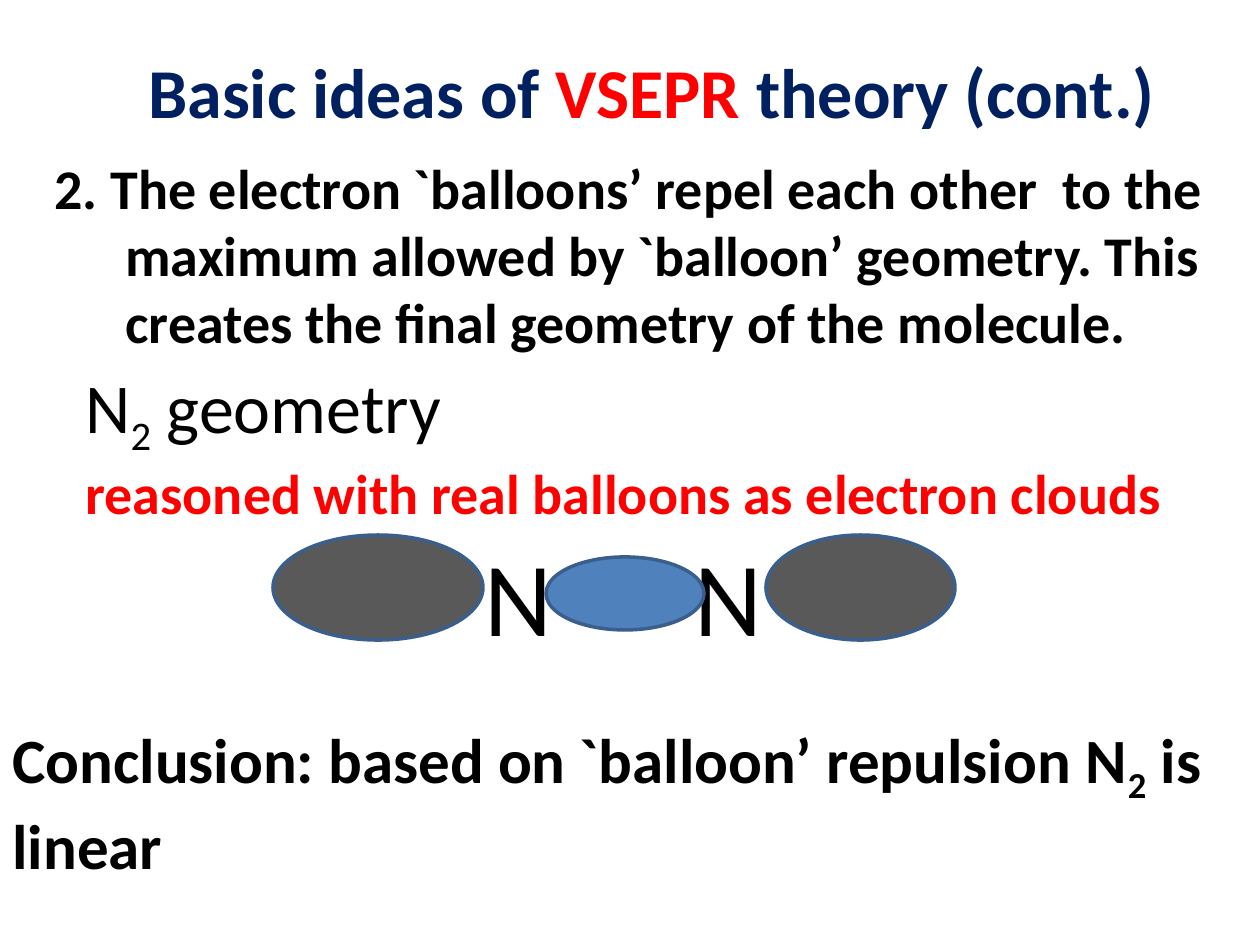
from pptx import Presentation
from pptx.dml.color import RGBColor
from pptx.enum.shapes import MSO_SHAPE
from pptx.oxml.ns import qn
from pptx.util import Pt
from lxml import etree

OVAL = MSO_SHAPE.OVAL
PX = 914400 / 126
THEME = {
    "font": "Calibri",
    "navy": "002060", "red": "FF0000", "black": "000000",
    "lone_pair": "595959", "bond": "4F81BD", "outline": "3A5F8C",
    "title": 40, "body": 32, "conclusion": 36, "atom": 60, "line": 2,
}


def px(length):
    return round(length * PX)


def color(name):
    return RGBColor.from_string(THEME[name])


def add_text(box, paragraphs, size="body", bold=False, fill="black", hanging=0, tab=0):
    """Each paragraph is a list of (text, overrides) runs."""
    frame = slide.shapes.add_textbox(*map(px, box)).text_frame
    frame.word_wrap = True
    for index, runs in enumerate(paragraphs):
        paragraph = frame.paragraphs[0] if index == 0 else frame.add_paragraph()
        properties = paragraph._p.get_or_add_pPr()
        if hanging:
            properties.set("marL", str(px(hanging)))
            properties.set("indent", str(-px(hanging)))
        if tab:
            stops = etree.SubElement(properties, qn("a:tabLst"))
            etree.SubElement(stops, qn("a:tab"), pos=str(px(tab)), algn="l")
        for text, changes in runs:
            run = paragraph.add_run()
            run.text = text
            run.font.name = THEME["font"]
            run.font.size = Pt(THEME[changes.get("size", size)])
            run.font.bold = changes.get("bold", bold)
            run.font.color.rgb = color(changes.get("fill", fill))
            if changes.get("subscript"):
                run._r.get_or_add_rPr().set("baseline", "-25000")


prs = Presentation()
prs.slide_width, prs.slide_height = px(1260), px(945)
slide = prs.slides.add_slide(prs.slide_layouts[6])
SUBSCRIPT = {"subscript": True}

# Title
add_text((136, 42, 1071, 97),
         [[("Basic ideas of ", {}), ("VSEPR", {"fill": "red"}), (" theory (cont.)", {})]],
         size="title", bold=True, fill="navy")

# Second idea
add_text((42, 147, 1176, 217),
         [[("2. The electron `balloons’ repel each other  to the maximum allowed by "
            "`balloon’ geometry. This creates the final geometry of the molecule.", {})]],
         bold=True, hanging=71)

# Example heading
add_text((73, 357, 1155, 165),
         [[("N", {}), ("2", SUBSCRIPT), (" geometry", {})],
          [("reasoned with real balloons as electron clouds",
            {"size": "body", "bold": True, "fill": "red"})]],
         size="title")

# Nitrogen atoms with their electron balloons
add_text((472, 525, 325, 140), [[("N\tN", {})]], size="atom", tab=210)
for box, cloud in [((273, 535, 210, 105), "lone_pair"),
                   ((766, 535, 189, 105), "lone_pair"),
                   ((546, 557, 158, 73), "bond")]:
    balloon = slide.shapes.add_shape(OVAL, *map(px, box))
    balloon.shadow.inherit = False
    balloon.fill.solid()
    balloon.fill.fore_color.rgb = color(cloud)
    balloon.line.color.rgb = color("outline")
    balloon.line.width = Pt(THEME["line"])

# Conclusion
add_text((0, 714, 1239, 165),
         [[("Conclusion: based on `balloon’ repulsion N", {}), ("2", SUBSCRIPT),
           (" is linear", {})]],
         size="conclusion", bold=True)

prs.save("out.pptx")
